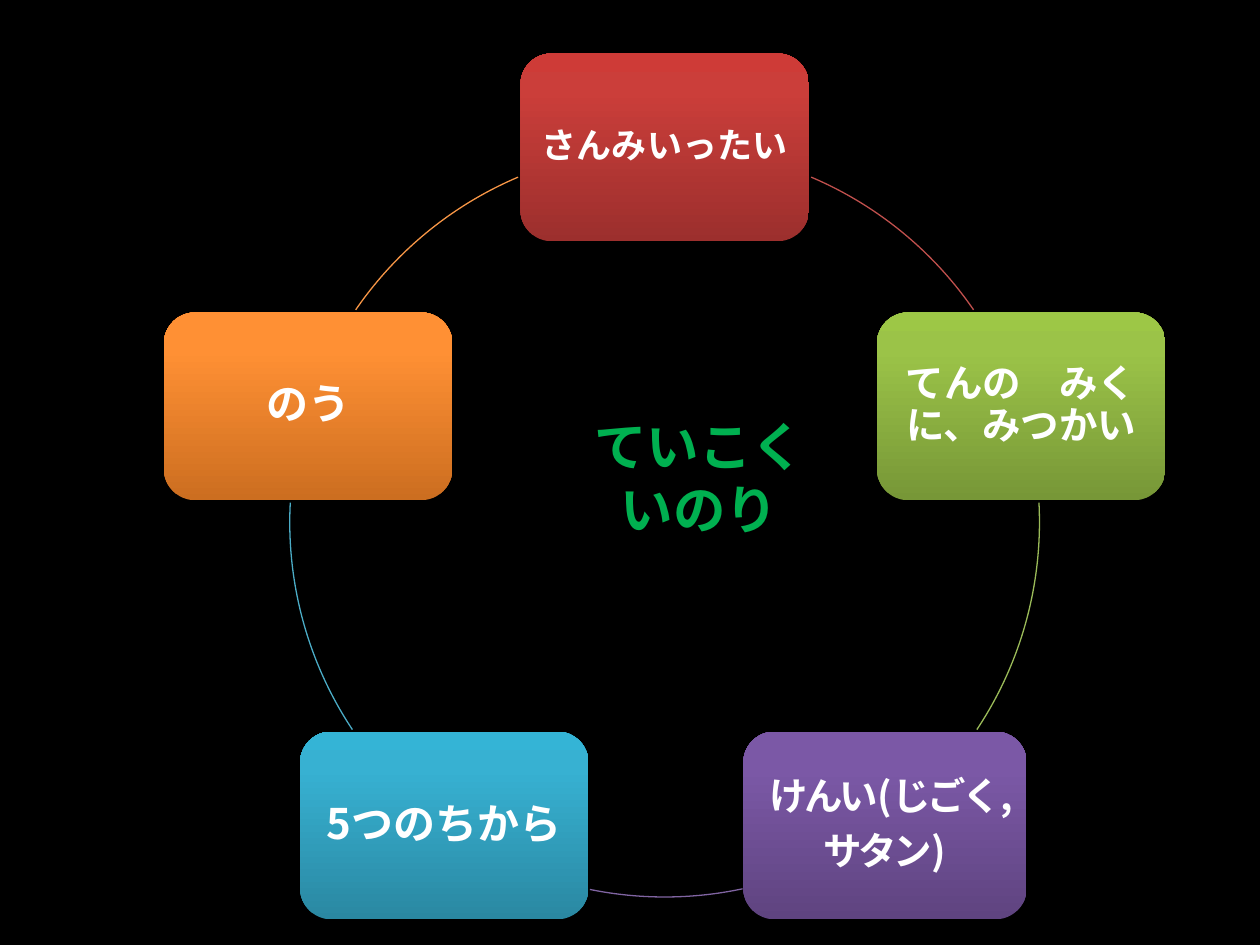
import copy
import math
from dataclasses import dataclass

import pptx
import pptx.dml.color
import pptx.enum.shapes
import pptx.enum.text
import pptx.oxml
import pptx.oxml.ns
import pptx.util

Pt = pptx.util.Pt
SHAPES = pptx.enum.shapes.MSO_SHAPE


@dataclass(frozen=True)
class Theme:
    font: str = "Noto Sans CJK JP"
    background: str = "000000"
    node_text: str = "FFFFFF"
    title_text: str = "00B050"
    title_size: float = 30
    small: float = 20
    medium: float = 22
    large: float = 24
    line_width: float = 0.75


@dataclass(frozen=True)
class Node:
    lines: tuple
    size: float
    gradient: tuple  # bottom, 80 %, top
    arc_color: str
    arc_angles: tuple  # clockwise degrees from the right-hand side
    width: float = 164.9
    tracking: float = 0


THEME = Theme()
NODE_HEIGHT = 107.3
NODES = (
    Node(("さんみいったい",), THEME.small,
         ("9C2F2D", "CB3E3A", "CE3B37"), "C0504D", (293, 325.5)),
    Node(("てんの　みくに、みつかい",), THEME.medium,
         ("779737", "9BC348", "9DC746"), "9BBB59", (357, 33.6)),
    Node(("けんい(じごく,", "サタン)"), THEME.medium,
         ("5F4480", "7B58A6", "7C57A8"), "8064A2", (78, 101.5),
         width=162, tracking=-2),
    Node(("5つのちから",), THEME.large,
         ("2A88A2", "37B1D2", "34B4D6"), "4BACC6", (146.4, 183)),
    Node(("のう",), THEME.large,
         ("CC6E20", "FF9034", "FF9136"), "F79646", (214.5, 247)),
)


def rgb(value):
    return pptx.dml.color.RGBColor.from_string(value)


def add_run(paragraph, text, size, color, tracking=0):
    run = paragraph.add_run()
    run.text = text
    run.font.name = THEME.font
    run.font.size = Pt(size)
    run.font.bold = True
    run.font.color.rgb = rgb(color)
    properties = run.font._element
    east_asian = pptx.oxml.parse_xml(
        f'<a:ea {pptx.oxml.ns.nsdecls("a")} typeface="{THEME.font}"/>')
    properties.find(pptx.oxml.ns.qn("a:latin")).addnext(east_asian)
    if tracking:
        properties.set("spc", str(tracking * 100))


def set_frame(frame, inset_x, inset_y):
    frame.word_wrap = True
    frame.vertical_anchor = pptx.enum.text.MSO_ANCHOR.MIDDLE
    frame.margin_left = frame.margin_right = Pt(inset_x)
    frame.margin_top = frame.margin_bottom = Pt(inset_y)


def fill_gradient(fill, colors):
    """Fill upwards with three stops at 0, 80 and 100 percent."""
    fill.gradient()
    fill.gradient_angle = 90
    last = fill.gradient_stops[-1]._gs
    last.addprevious(copy.deepcopy(last))
    for stop, color, position in zip(fill.gradient_stops, colors, (0, 0.8, 1)):
        stop.color.rgb = rgb(color)
        stop.position = position


def add_node(slide, node, center_x, center_y):
    shape = slide.shapes.add_shape(
        SHAPES.ROUNDED_RECTANGLE,
        Pt(center_x - node.width / 2), Pt(center_y - NODE_HEIGHT / 2),
        Pt(node.width), Pt(NODE_HEIGHT))
    shape.shadow.inherit = False
    shape.line.fill.background()
    fill_gradient(shape.fill, node.gradient)
    frame = shape.text_frame
    set_frame(frame, 0.3 * node.size, 0.3 * node.size)
    for index, line in enumerate(node.lines):
        paragraph = frame.add_paragraph() if index else frame.paragraphs[0]
        paragraph.alignment = pptx.enum.text.PP_ALIGN.CENTER
        paragraph.line_spacing = 0.9
        paragraph.space_after = Pt(0.35 * node.size)
        add_run(paragraph, line, node.size, THEME.node_text, node.tracking)


def add_arc(slide, node, left, top, diameter):
    arc = slide.shapes.add_shape(
        SHAPES.ARC, Pt(left), Pt(top), Pt(diameter), Pt(diameter))
    arc.shadow.inherit = False
    arc.fill.background()
    arc.line.color.rgb = rgb(node.arc_color)
    arc.line.width = Pt(THEME.line_width)
    for index, angle in enumerate(node.arc_angles):
        arc.adjustments[index] = angle * 0.6  # 60000 units a degree, scaled by 100000


def add_cycle(slide, left, top, diameter):
    """Space the nodes evenly round a circle, starting at its top."""
    radius = diameter / 2
    for index, node in enumerate(NODES):
        angle = 2 * math.pi * index / len(NODES)
        add_node(slide, node,
                 left + radius * (1 + math.sin(angle)),
                 top + radius * (1 - math.cos(angle)))
        add_arc(slide, node, left, top, diameter)


def add_title(slide, left, top, width, height):
    box = slide.shapes.add_textbox(Pt(left), Pt(top), Pt(width), Pt(height))
    set_frame(box.text_frame, 7.2, 3.6)
    paragraph = box.text_frame.paragraphs[0]
    paragraph.alignment = pptx.enum.text.PP_ALIGN.CENTER
    add_run(paragraph, "ていこく", THEME.title_size, THEME.title_text)
    paragraph.add_line_break()
    add_run(paragraph, "いのり", THEME.title_size, THEME.title_text)


def main():
    presentation = pptx.Presentation()
    presentation.slide_width = Pt(720)
    presentation.slide_height = Pt(540)
    slide = presentation.slides.add_slide(presentation.slide_layouts[6])
    slide.background.fill.solid()
    slide.background.fill.fore_color.rgb = rgb(THEME.background)
    add_cycle(slide, left=165.6, top=84.2, diameter=428.4)
    add_title(slide, left=308.9, top=213.1, width=181.4, height=118.8)
    presentation.save("out.pptx")


if __name__ == "__main__":
    main()
